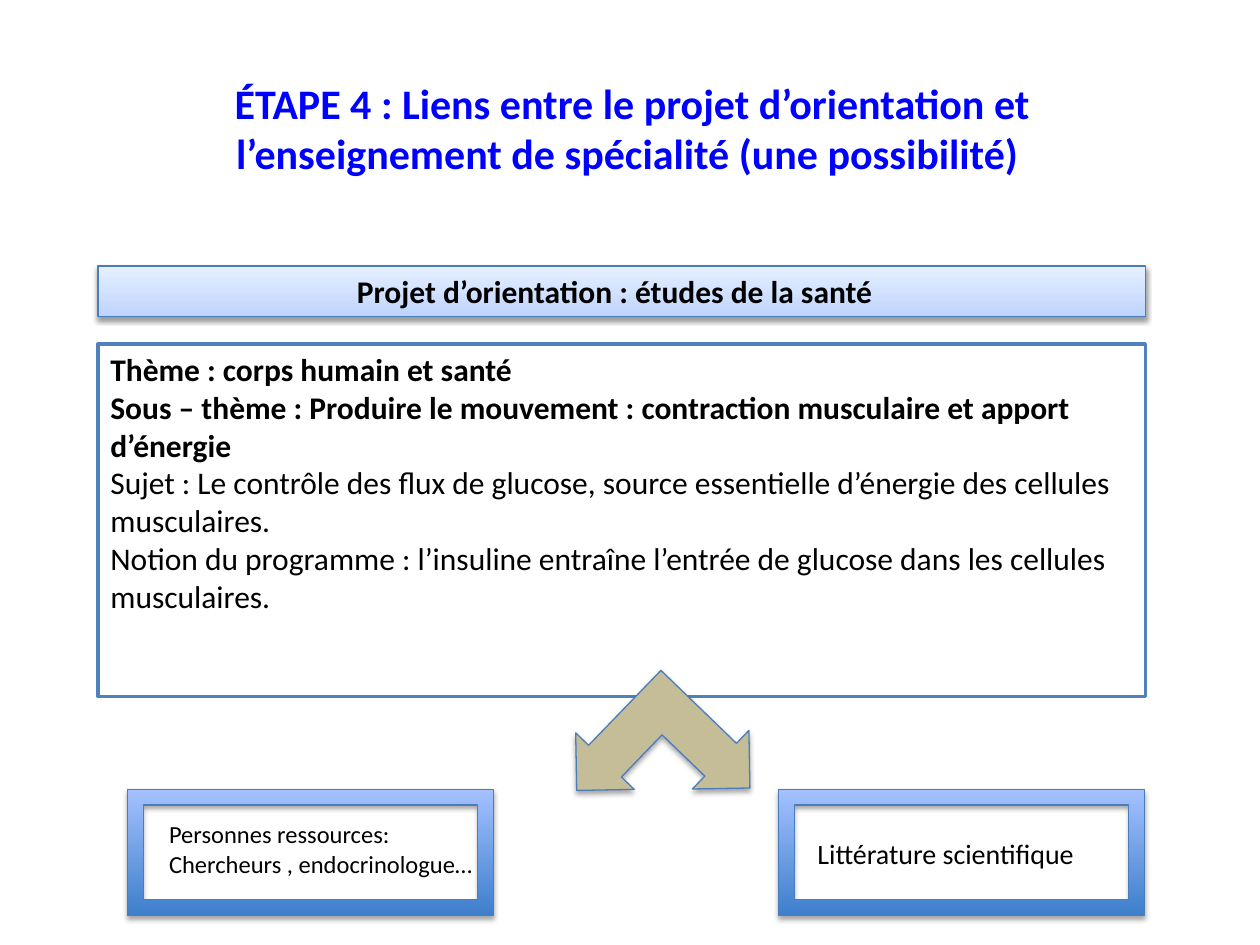
from lxml import etree
from pptx import Presentation
from pptx.dml.color import RGBColor
from pptx.enum.shapes import MSO_SHAPE as SHAPE
from pptx.enum.text import MSO_ANCHOR, PP_ALIGN
from pptx.oxml.ns import qn
from pptx.util import Pt

BLACK = RGBColor(0x00, 0x00, 0x00)
WHITE = RGBColor(0xFF, 0xFF, 0xFF)
TITLE_BLUE = RGBColor(0x00, 0x00, 0xFF)
LINE_BLUE = RGBColor(0x4A, 0x7E, 0xBB)
BOX_BLUE = RGBColor(0x4F, 0x81, 0xBD)
SAND = RGBColor(0xC4, 0xBD, 0x97)
# Gradients run from bottom to top
BANNER_FILL = (RGBColor(0xBF, 0xD4, 0xFE), RGBColor(0xE5, 0xEF, 0xFF))
FRAME_FILL = (RGBColor(0x3E, 0x7F, 0xCC), RGBColor(0xA4, 0xC1, 0xFF))

TITLE = ("ÉTAPE 4 : Liens entre le projet d’orientation et "
         "l’enseignement de spécialité (une possibilité) ")
BANNER = "Projet d’orientation : études de la santé"
TOPIC = [  # text, bold
    ("Thème : corps humain et santé", True),
    ("Sous – thème : Produire le mouvement : contraction musculaire "
     "et apport d’énergie", True),
    ("Sujet : Le contrôle des flux de glucose, source essentielle "
     "d’énergie des cellules musculaires.", False),
    ("Notion du programme : l’insuline entraîne l’entrée de glucose "
     "dans les cellules musculaires.", False),
]
RESOURCES = [  # frame left, label, label box, size
    (73, "Personnes ressources: Chercheurs , endocrinologue…",
     (89.5, 464.5, 193, 40), 14),
    (445, "Littérature scientifique", (460, 474.5, 173, 26), 16),
]
LEFT, WIDTH = 56, 598.5
FRAME_TOP, FRAME_W, FRAME_H = 451, 209, 72


def write(sp, paragraphs, size, color=BLACK, align=PP_ALIGN.LEFT, right=7.2):
    """Fill a shape with (text, bold) paragraphs."""
    tf = sp.text_frame
    tf.word_wrap = True
    tf.vertical_anchor = MSO_ANCHOR.TOP
    tf.margin_right = Pt(right)
    for i, (text, bold) in enumerate(paragraphs):
        p = tf.add_paragraph() if i else tf.paragraphs[0]
        p.alignment = align
        r = p.add_run()
        r.text = text
        r.font.name, r.font.size, r.font.bold = "Calibri", Pt(size), bold
        r.font.color.rgb = color


def add_text(slide, box, text, size, bold=False, **fmt):
    sp = slide.shapes.add_textbox(*map(Pt, box))
    write(sp, [(text, bold)], size, **fmt)


def add_shape(slide, kind, box, fill, line=LINE_BLUE, weight=0.75, shadow=0):
    """Add a shape; a pair of colours makes a gradient, shadow is its opacity in %."""
    sp = slide.shapes.add_shape(kind, *map(Pt, box))
    if isinstance(fill, RGBColor):
        sp.fill.solid()
        sp.fill.fore_color.rgb = fill
    else:
        sp.fill.gradient()
        sp.fill.gradient_angle = 90
        for stop, color in zip(sp.fill.gradient_stops, fill):
            stop.color.rgb = color
    sp.line.color.rgb = line
    sp.line.width = Pt(weight)
    sp.shadow.inherit = False
    if shadow:
        effects = sp._element.spPr.find(qn("a:effectLst"))
        outer = etree.SubElement(effects, qn("a:outerShdw"), blurRad=str(Pt(3.1)),
                                 dist=str(Pt(1.8)), dir="5400000", rotWithShape="0")
        tone = etree.SubElement(outer, qn("a:srgbClr"), val=str(BLACK))
        etree.SubElement(tone, qn("a:alpha"), val=str(shadow * 1000))
    return sp


def main():
    prs = Presentation()
    prs.slide_width, prs.slide_height = Pt(720), Pt(540)
    slide = prs.slides.add_slide(prs.slide_layouts[6])

    add_text(slide, (89.5, 40.5, 543.5, 93.5), TITLE, 24, bold=True,
             color=TITLE_BLUE, align=PP_ALIGN.CENTER)

    banner = add_shape(slide, SHAPE.RECTANGLE, (LEFT, 152, WIDTH, 29),
                       BANNER_FILL, shadow=38)
    write(banner, [(BANNER, True)], 18, align=PP_ALIGN.CENTER, right=15)

    topic = add_shape(slide, SHAPE.RECTANGLE, (LEFT, 196.5, WIDTH, 201.5),
                      WHITE, line=BOX_BLUE, weight=2)
    write(topic, TOPIC, 18)

    arrow = add_shape(slide, SHAPE.LEFT_UP_ARROW, (332, 388, 93.5, 93), SAND, shadow=35)
    arrow.rotation = 224
    arrow.adjustments[0] = 0.28

    for left, label, box, size in RESOURCES:
        frame = add_shape(slide, SHAPE.FRAME, (left, FRAME_TOP, FRAME_W, FRAME_H),
                          FRAME_FILL, shadow=35)
        frame.adjustments[0] = 0.125
        add_text(slide, box, label, size)

    prs.save("out.pptx")


if __name__ == "__main__":
    main()
